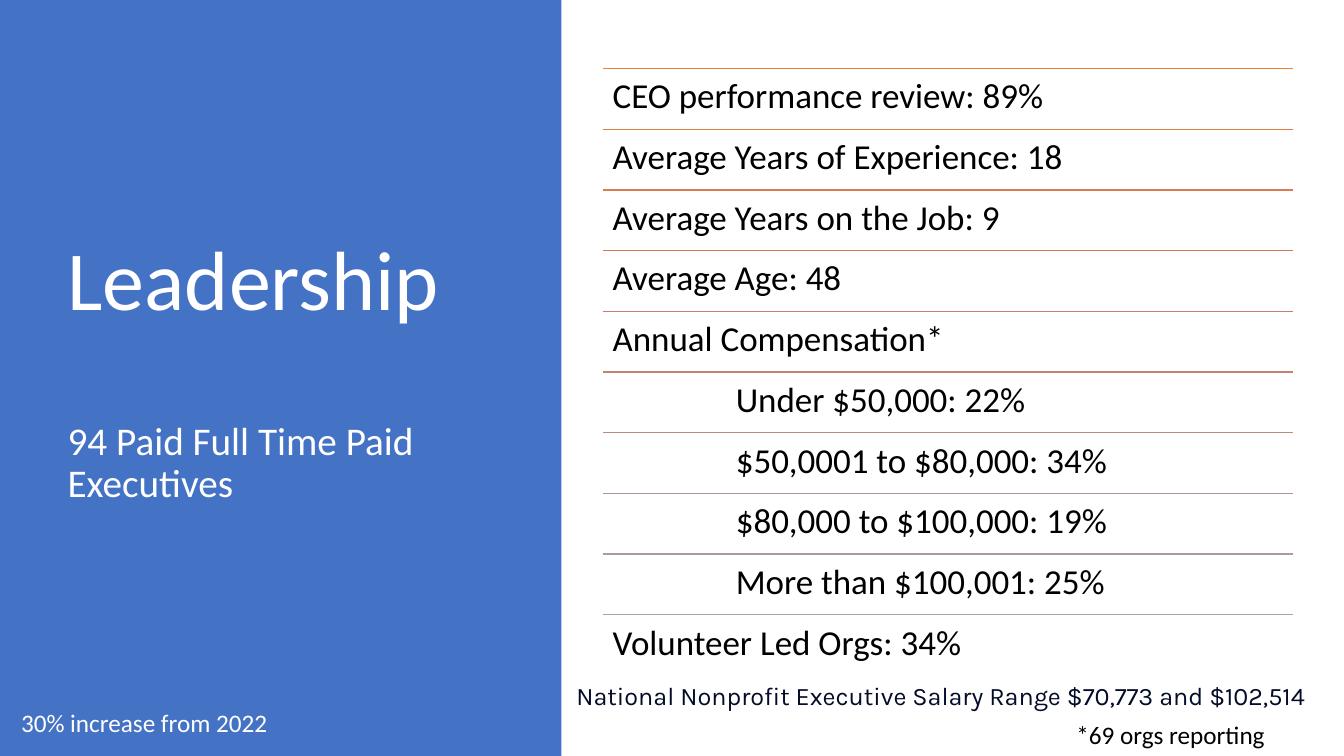
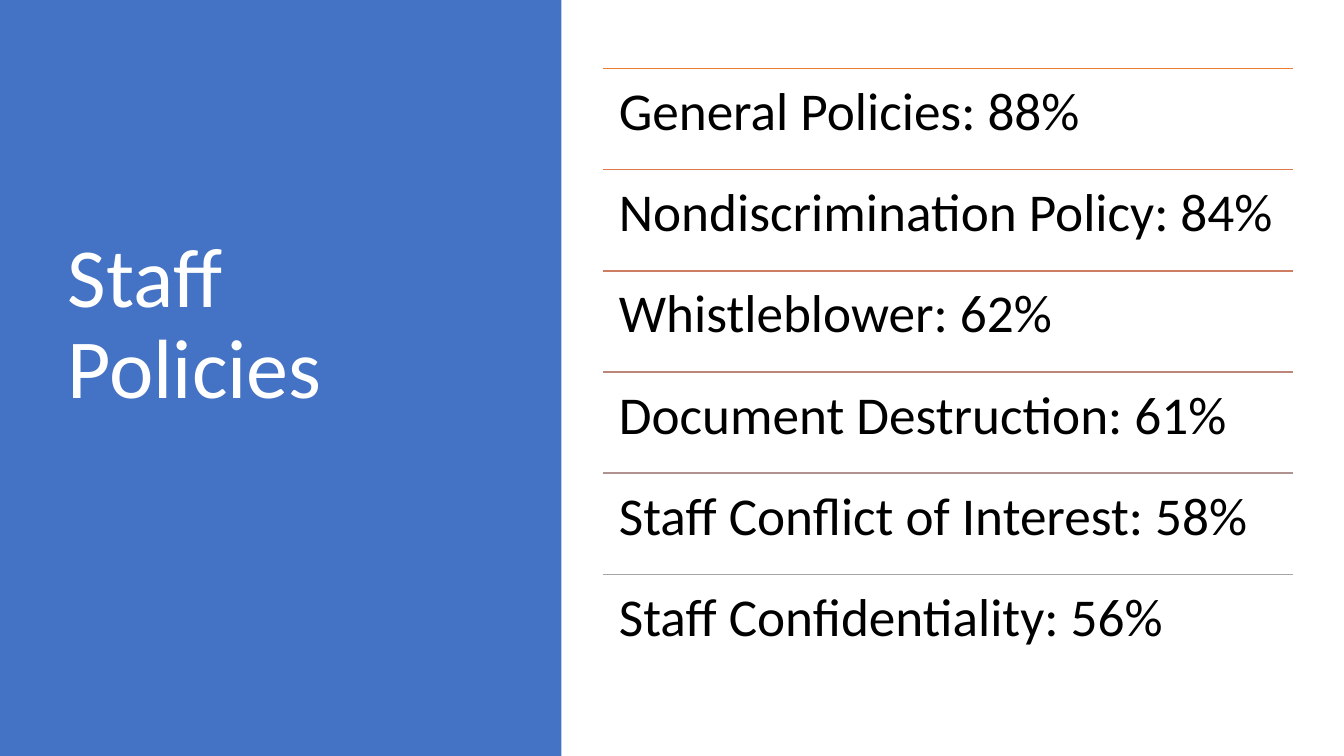
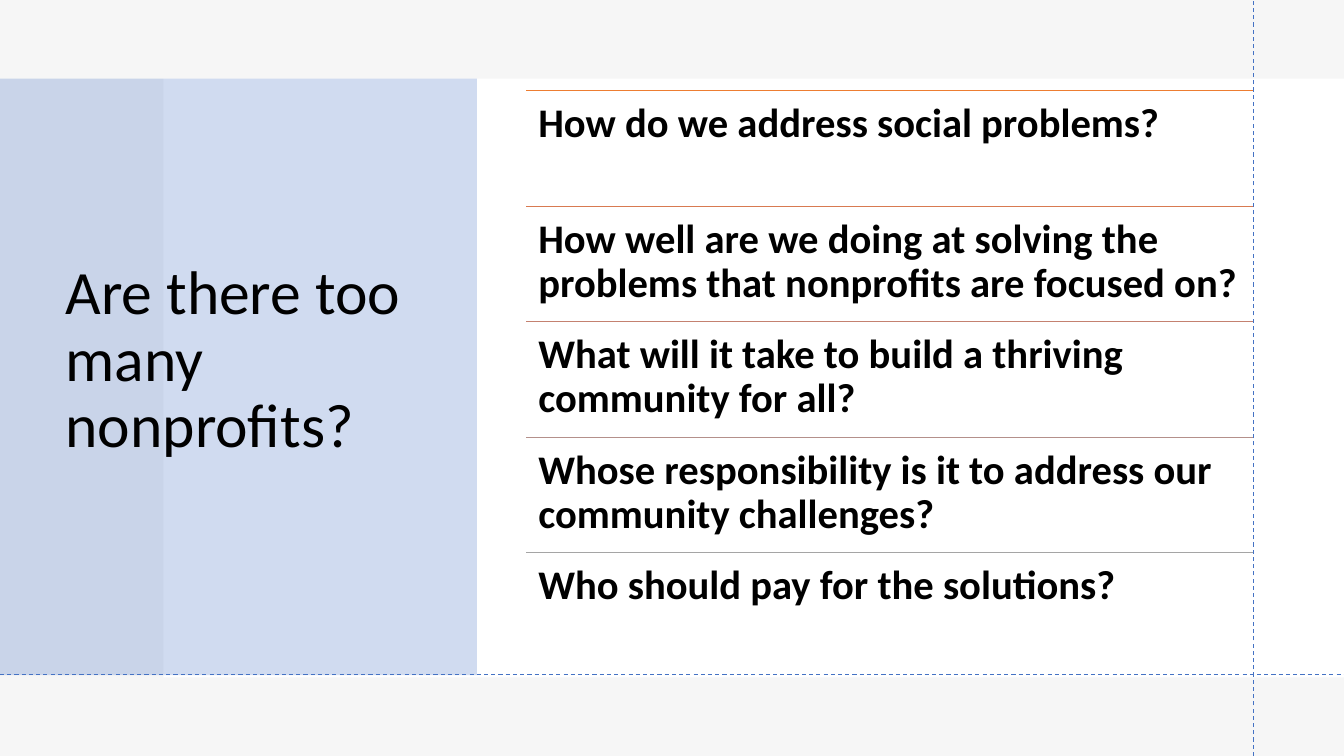
"""Build three nonprofit survey slides: a side title beside a ruled list."""
import colorsys

import lxml.etree
import pptx
import pptx.dml.color
import pptx.enum.dml
import pptx.enum.shapes
import pptx.enum.text
import pptx.oxml.ns
import pptx.util

FONT = "Calibri"
BLUE, WHITE, BLACK, GREY = "4472C4", "FFFFFF", "000000", "E7E6E6"
FIRST_RULE, LAST_RULE = "ED7D31", "A5A5A5"
SIDE_PANEL = ((0, 0, 41.78, 100), BLUE, 100)
SIDE_TITLE = (4.28, 9.07, 31.2, 80.27)
SIDE_LIST = (44.85, 9.07, 51.38, 80.27)
INDENT = 1.22

deck = pptx.Presentation()
deck.slide_width = pptx.util.Inches(13.33)
deck.slide_height = pptx.util.Inches(7.5)


def color(code):
    """Turn a hex string into a colour."""
    return pptx.dml.color.RGBColor.from_string(code)


def grid(*shares):
    """Turn alternating percentages of slide width and height into lengths."""
    sides = (deck.slide_width, deck.slide_height) * 2
    return [round(side * share / 100) for side, share in zip(sides, shares)]


pages = [
    {
        "panels": [SIDE_PANEL],
        "title": [("Leadership", 60, 0), ("94 Paid Full Time Paid Executives", 28, 66)],
        "title_box": SIDE_TITLE, "title_color": WHITE, "title_bottom": 0.05,
        "list_box": SIDE_LIST, "size": 25, "inset": 0.1, "bold": False,
        "rows": [
            (0, "CEO performance review: 89%"),
            (0, "Average Years of Experience: 18"),
            (0, "Average Years on the Job: 9"),
            (0, "Average Age: 48"),
            (0, "Annual Compensation*"),
            (1, "Under $50,000: 22%"),
            (1, "$50,0001 to $80,000: 34%"),
            (1, "$80,000 to $100,000: 19%"),
            (1, "More than $100,001: 25%"),
            (0, "Volunteer Led Orgs: 34%"),
        ],
        "notes": [
            ((0.83, 92.93, 20.03, 5.33), "30% increase from 2022", FONT, WHITE, False),
            ((42.15, 89.33, 56.85, 5.33),
             "National Nonprofit Executive Salary Range $70,773 and $102,514",
             "Karla", "040C28", True),
            ((79.35, 94.53, 15.68, 5.33), "*69 orgs reporting", FONT, BLACK, False),
        ],
        "guides": [],
    },
    {
        "panels": [SIDE_PANEL],
        "title": [("Staff Policies", 60, 0)],
        "title_box": SIDE_TITLE, "title_color": WHITE, "title_bottom": 0.97,
        "list_box": SIDE_LIST, "size": 38, "inset": 0.16, "bold": False,
        "rows": [
            (0, "General Policies: 88%"),
            (0, "Nondiscrimination Policy: 84%"),
            (0, "Whistleblower: 62%"),
            (0, "Document Destruction: 61%"),
            (0, "Staff Conflict of Interest: 58%"),
            (0, "Staff Confidentiality: 56%"),
        ],
        "notes": [],
        "guides": [],
    },
    {
        "panels": [
            ((0, 0, 100, 100), GREY, 35),
            ((12.15, 10.4, 87.85, 79.2), WHITE, 100),
            ((0, 10.4, 35.48, 78.93), BLUE, 25),
        ],
        "title": [("Are there too many nonprofits?", 44, 0)],
        "title_box": (4.13, 9.87, 29.63, 75.87), "title_color": BLACK, "title_bottom": 0.05,
        "list_box": (39.15, 12, 54.08, 76.4), "size": 29, "inset": 0.12, "bold": True,
        "rows": [
            (0, "How do we address social problems?"),
            (0, "How well are we doing at solving the problems that nonprofits are focused on?"),
            (0, "What will it take to build a thriving community for all?"),
            (0, "Whose responsibility is it to address our community challenges?"),
            (0, "Who should pay for the solutions?"),
        ],
        "notes": [],
        "guides": [(93.23, 100, 93.23, 0), (0, 89.2, 100, 89.2)],
    },
]

first_hls, last_hls = [
    colorsys.rgb_to_hls(*(value / 255 for value in color(code)))
    for code in (FIRST_RULE, LAST_RULE)
]

for content in pages:
    page = deck.slides.add_slide(deck.slide_layouts[5])

    for box, code, opacity in content["panels"]:
        panel = page.shapes.add_shape(pptx.enum.shapes.MSO_SHAPE.RECTANGLE, *grid(*box))
        panel.shadow.inherit = False
        panel.line.fill.background()
        panel.fill.solid()
        panel.fill.fore_color.rgb = color(code)
        if opacity < 100:
            tint = panel.element.spPr.find(".//" + pptx.oxml.ns.qn("a:srgbClr"))
            alpha = lxml.etree.SubElement(tint, pptx.oxml.ns.qn("a:alpha"))
            alpha.set("val", str(opacity * 1000))

    title = page.shapes.title
    title.element.getparent().append(title.element)
    title.left, title.top, title.width, title.height = grid(*content["title_box"])
    frame = title.text_frame
    frame.auto_size = pptx.enum.text.MSO_AUTO_SIZE.NONE
    frame.vertical_anchor = pptx.enum.text.MSO_ANCHOR.MIDDLE
    frame.margin_bottom = pptx.util.Inches(content["title_bottom"])
    frame.text = "\n".join(text for text, size, gap in content["title"])
    for paragraph, (text, size, gap) in zip(frame.paragraphs, content["title"]):
        paragraph.alignment = pptx.enum.text.PP_ALIGN.LEFT
        paragraph.line_spacing = 0.9
        paragraph.space_before = pptx.util.Pt(gap)
        paragraph.font.name = FONT
        paragraph.font.size = pptx.util.Pt(size)
        paragraph.font.color.rgb = color(content["title_color"])

    lines = [(ends, BLUE, 0.75, True) for ends in content["guides"]]
    labels = []
    left, top, width, height = content["list_box"]
    step = height / len(content["rows"])
    inset = content["inset"]
    for index, (level, text) in enumerate(content["rows"]):
        share = index / (len(content["rows"]) - 1)
        blend = [a + (b - a) * share for a, b in zip(first_hls, last_hls)]
        code = "".join(f"{round(value * 255):02X}" for value in colorsys.hls_to_rgb(*blend))
        row_top = top + index * step
        lines.append(((left, row_top, left + width, row_top), code, 1, False))
        labels.append(((left, row_top, width, step), text, FONT, BLACK, True,
                       content["size"], content["bold"], 0.9,
                       (inset + level * INDENT, inset, inset, inset)))
    for note in content["notes"]:
        labels.append((*note, 18, False, 1.0, (0.1, 0.05, 0.1, 0.05)))

    for ends, code, weight, dashed in lines:
        rule = page.shapes.add_connector(pptx.enum.shapes.MSO_CONNECTOR.STRAIGHT, *grid(*ends))
        rule.line.color.rgb = color(code)
        rule.line.width = pptx.util.Pt(weight)
        if dashed:
            rule.line.dash_style = pptx.enum.dml.MSO_LINE.DASH
        lxml.etree.SubElement(rule.element.spPr, pptx.oxml.ns.qn("a:effectLst"))

    for box, text, font, code, wrap, size, bold, spacing, insets in labels:
        frame = page.shapes.add_textbox(*grid(*box)).text_frame
        frame.word_wrap = wrap
        frame.margin_left, frame.margin_top, frame.margin_right, frame.margin_bottom = map(
            pptx.util.Inches, insets)
        paragraph = frame.paragraphs[0]
        paragraph.text = text
        paragraph.line_spacing = spacing
        paragraph.font.name = font
        paragraph.font.size = pptx.util.Pt(size)
        paragraph.font.bold = bold
        paragraph.font.color.rgb = color(code)

deck.save("out.pptx")
